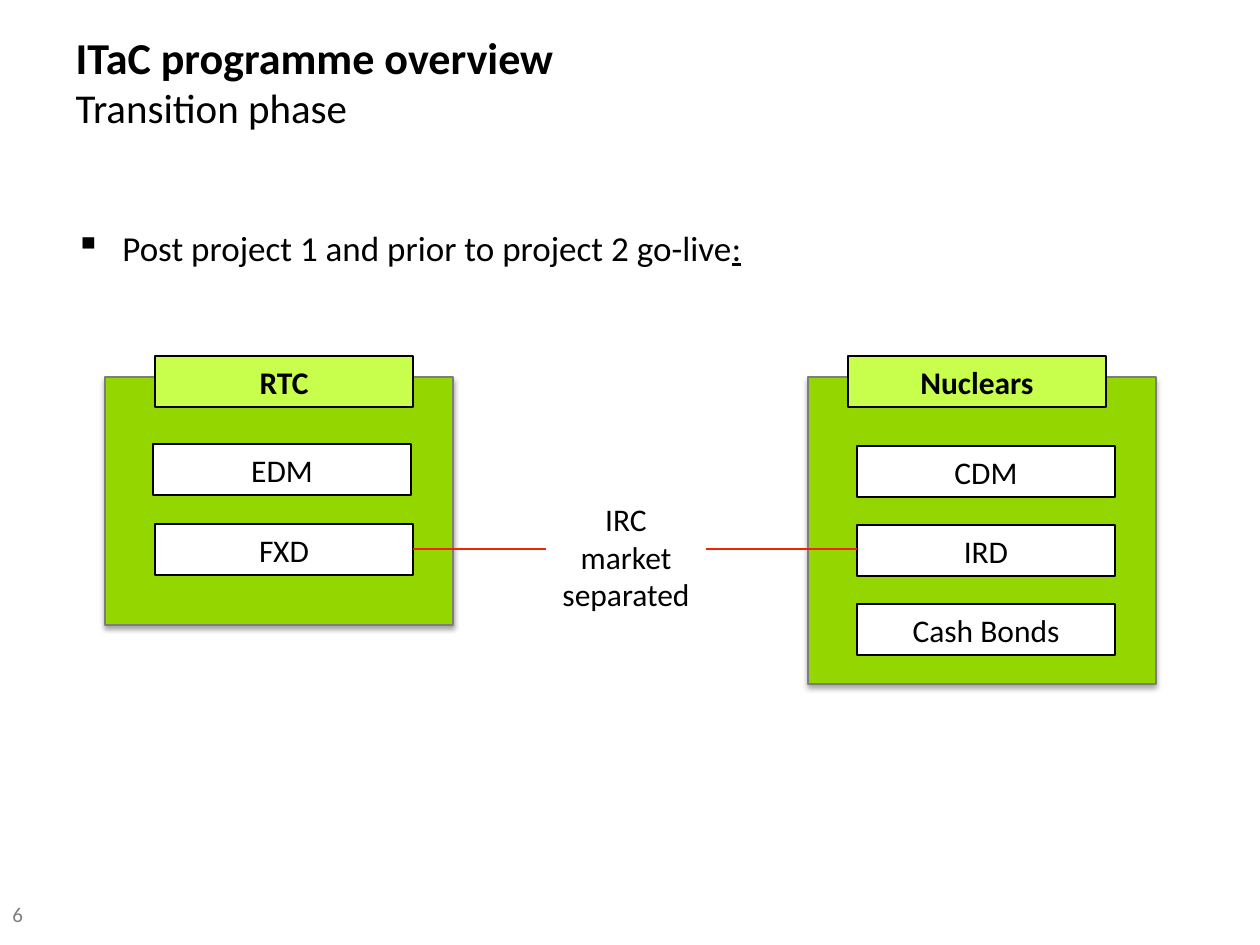
from lxml.etree import SubElement
from pptx import Presentation
from pptx.dml.color import RGBColor
from pptx.enum.shapes import MSO_CONNECTOR as Connector, MSO_SHAPE as Shape
from pptx.enum.text import MSO_ANCHOR as Anchor, PP_ALIGN as Align
from pptx.oxml.ns import qn
from pptx.util import Emu, Pt

PX = 914400 / 126
FONT = "Calibri"
BLACK, WHITE, GREY = "000000", "FFFFFF", "808080"
GREEN, LIME, BORDER, RED = "94D600", "C8FF4D", "7D7D7D", "F22400"
BOX_WIDTH, BOX_HEIGHT = 258, 51
PANEL_WIDTH, PANEL_TOP, HEADER_TOP = 348, 377, 356


def px(*lengths):
    """Turn pixel lengths into EMU."""
    return [Emu(round(length * PX)) for length in lengths]


def color(value):
    """Turn a hex string into a colour."""
    return RGBColor.from_string(value)


def set_font(font, size, bold=False, fill=BLACK):
    """Format a paragraph or run font."""
    font.name, font.size, font.bold = FONT, Pt(size), bold
    font.color.rgb = color(fill)


def add_box(slide, bounds, fill, line=BLACK, text="", bold=False):
    """Add a rectangle with centred lines of text."""
    shape = slide.shapes.add_shape(Shape.RECTANGLE, *px(*bounds))
    shape.shadow.inherit = False
    shape.fill.solid()
    shape.fill.fore_color.rgb = color(fill)
    if line:
        shape.line.color.rgb = color(line)
        shape.line.width = Pt(0.75)
    else:
        shape.line.fill.background()
    frame = shape.text_frame
    frame.vertical_anchor = Anchor.MIDDLE
    if text:
        frame.text = text
        for paragraph in frame.paragraphs:
            paragraph.alignment = Align.CENTER
            set_font(paragraph.font, 18, bold)
    return shape


def add_shadow(shape):
    """Give a shape a soft shadow below it."""
    effects = shape._element.spPr.find(qn("a:effectLst"))
    shadow = SubElement(effects, qn("a:outerShdw"), blurRad=str(Pt(3.1)),
                        dist=str(Pt(1.8)), dir="5400000", rotWithShape="0")
    black = SubElement(shadow, qn("a:srgbClr"), val=BLACK)
    SubElement(black, qn("a:alpha"), val="35000")


def add_system(slide, left, height, header_left, name, markets):
    """Add a system panel with its header and market boxes."""
    panel = add_box(slide, (left, PANEL_TOP, PANEL_WIDTH, height), GREEN, BORDER)
    add_shadow(panel)
    add_box(slide, (header_left, HEADER_TOP, BOX_WIDTH, BOX_HEIGHT), LIME, text=name, bold=True)
    for market, box_left, top in markets:
        add_box(slide, (box_left, top, BOX_WIDTH, BOX_HEIGHT), WHITE, text=market)


def add_line(slide, start, end):
    """Add a thin red line."""
    line = slide.shapes.add_connector(Connector.STRAIGHT, *px(*start, *end))
    line.line.color.rgb = color(RED)
    line.line.width = Pt(0.75)
    SubElement(line._element.spPr, qn("a:effectLst"))


def add_text(slide, bounds):
    """Add a wrapping text box and return its first paragraph."""
    frame = slide.shapes.add_textbox(*px(*bounds)).text_frame
    frame.word_wrap = True
    return frame.paragraphs[0]


def set_title(slide, heading, subheading):
    """Place and format the two-line title."""
    title = slide.shapes.title
    title.left, title.top, title.width, title.height = px(63, 25, 794, 112)
    frame = title.text_frame
    frame.vertical_anchor = Anchor.MIDDLE
    paragraph = frame.paragraphs[0]
    paragraph.alignment = Align.LEFT
    first = paragraph.add_run()
    first.text = heading
    set_font(first.font, 25.2, True)
    paragraph.add_line_break()
    second = paragraph.add_run()
    second.text = subheading
    set_font(second.font, 23.4)


def add_bullet(slide, text, underlined):
    """Add the bulleted statement with its underlined ending."""
    paragraph = add_text(slide, (63, 220, 1053, 624))
    properties = paragraph._p.get_or_add_pPr()
    indent = px(47)[0]
    properties.set("marL", str(indent))
    properties.set("indent", str(-indent))
    SubElement(properties, qn("a:buChar"), char="▪")
    set_font(paragraph.font, 20)
    paragraph.add_run().text = text
    ending = paragraph.add_run()
    ending.text = underlined
    ending.font.underline = True


def main():
    """Build and save the slide."""
    presentation = Presentation()
    presentation.slide_width, presentation.slide_height = px(1260, 945)
    slide = presentation.slides.add_slide(presentation.slide_layouts[5])
    set_title(slide, "ITaC programme overview", "Transition phase")
    add_bullet(slide, "Post project 1 and prior to project 2 go-live", ":")
    add_system(slide, 105, 248, 155, "RTC", [("EDM", 153, 444), ("FXD", 155, 524)])
    add_system(slide, 808, 307, 848, "Nuclears",
               [("CDM", 857, 446), ("IRD", 857, 525), ("Cash Bonds", 857, 604)])
    add_line(slide, (413, 549), (857, 549))
    add_box(slide, (546, 493, 160, 127), WHITE, None, "IRC\nmarket\nseparated")
    number = add_text(slide, (0, 895, 74, 50))
    number.text = "6"
    set_font(number.font, 12, fill=GREY)
    presentation.save("out.pptx")


if __name__ == "__main__":
    main()
